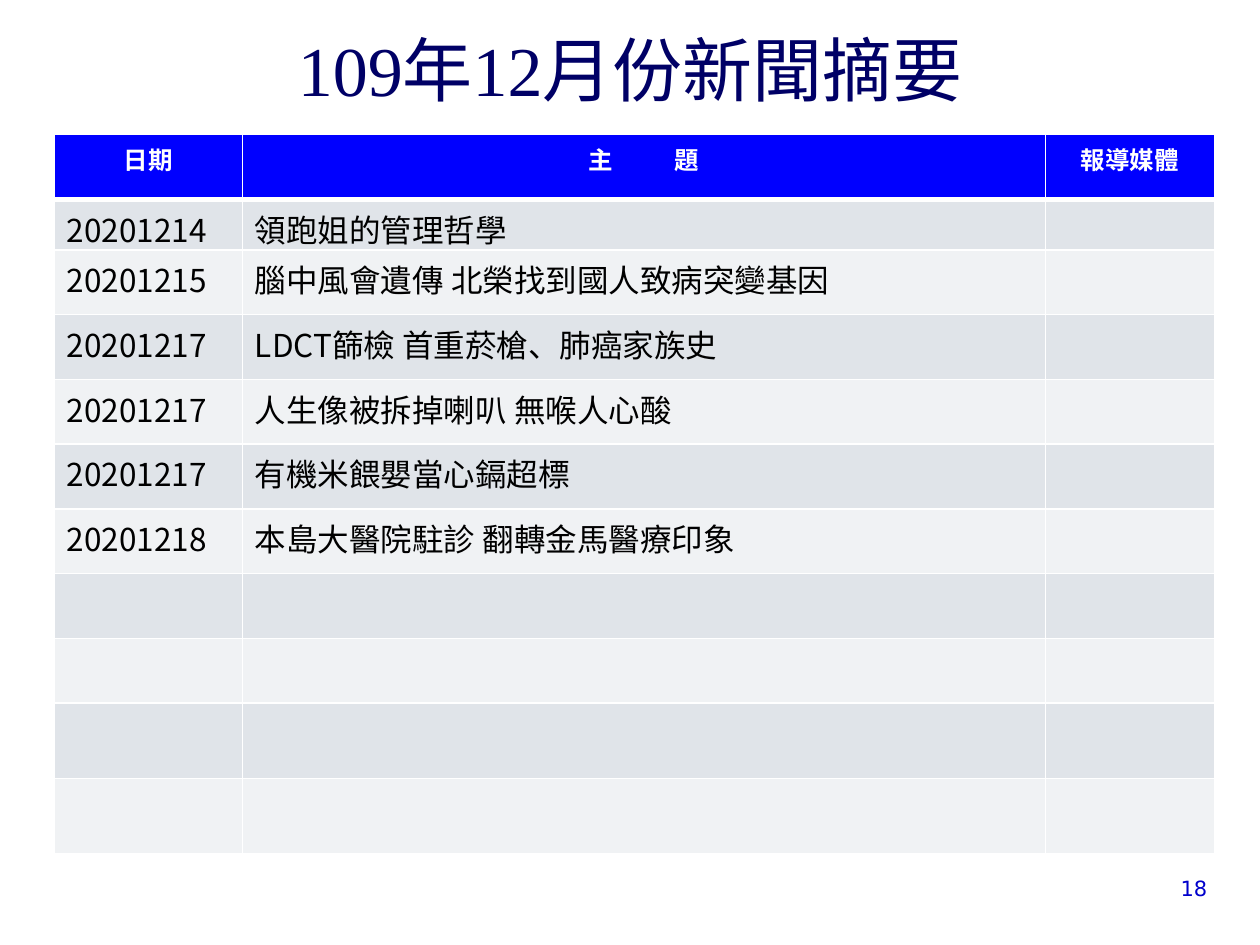
import pptx
import pptx.dml.color
import pptx.enum.text
import pptx.oxml
import pptx.oxml.ns
import pptx.util

Pt = pptx.util.Pt
RGB = pptx.dml.color.RGBColor
ALIGN = pptx.enum.text.PP_ALIGN
ANCHOR = pptx.enum.text.MSO_ANCHOR

WHITE = RGB(0xFF, 0xFF, 0xFF)
BLACK = RGB(0x00, 0x00, 0x00)
NAVY = RGB(0x00, 0x00, 0x66)
BLUE = RGB(0x00, 0x00, 0xFF)
NUMBER_BLUE = RGB(0x00, 0x00, 0xCC)
BANDS = (RGB(0xE0, 0xE4, 0xE9), RGB(0xF0, 0xF2, 0xF4))

CJK = "Noto Sans CJK SC"


def add_text(p, text, size=18, font=CJK, color=BLACK, bold=False,
             align=ALIGN.LEFT, spacing=0):
    """Add a run to a paragraph; spacing is extra points after each letter."""
    p.alignment = align
    r = p.add_run()
    r.text = text
    r.font.size = Pt(size)
    r.font.bold = bold
    r.font.color.rgb = color
    r.font.name = font
    rPr = r.font._element
    ea = pptx.oxml.parse_xml(f'<a:ea {pptx.oxml.ns.nsdecls("a")} typeface="{CJK}"/>')
    rPr.find(pptx.oxml.ns.qn("a:latin")).addnext(ea)
    if spacing:
        rPr.set("spc", str(spacing * 100))


class Deck:
    def __init__(self, width, height):
        self.prs = pptx.Presentation()
        self.prs.slide_width, self.prs.slide_height = Pt(width), Pt(height)
        self.s = self.prs.slides.add_slide(self.prs.slide_layouts[6])

    def text_box(self, x, y, w, h, text, anchor=ANCHOR.TOP, **fmt):
        sp = self.s.shapes.add_textbox(Pt(x), Pt(y), Pt(w), Pt(h))
        tf = sp.text_frame
        tf.word_wrap = True
        tf.vertical_anchor = anchor
        add_text(tf.paragraphs[0], text, **fmt)

    def borders(self, cell, top=1, bottom=1):
        tcPr = cell._tc.get_or_add_tcPr()
        for side, width in (("L", 1), ("R", 1), ("T", top), ("B", bottom)):
            tcPr.append(pptx.oxml.parse_xml(
                f'<a:ln{side} {pptx.oxml.ns.nsdecls("a")} w="{Pt(width)}">'
                f'<a:solidFill><a:srgbClr val="{WHITE}"/></a:solidFill></a:ln{side}>'))

    def table(self, x, y, widths, heights, header, rows):
        tbl = self.s.shapes.add_table(len(heights), len(widths), Pt(x), Pt(y),
                                      Pt(sum(widths)), Pt(sum(heights))).table
        tbl.horz_banding = False
        for col, width in zip(tbl.columns, widths):
            col.width = Pt(width)
        for i, height in enumerate(heights):
            tbl.rows[i].height = Pt(height)
            for cell in tbl.rows[i].cells:
                self.borders(cell, top=3 if i == 1 else 1, bottom=3 if i == 0 else 1)
                cell.fill.solid()
                cell.fill.fore_color.rgb = BANDS[(i - 1) % 2] if i else BLUE

        # Header runs: (text, letter spacing)
        for j, runs in enumerate(header):
            for text, spacing in runs:
                add_text(tbl.cell(0, j).text_frame.paragraphs[0], text, size=14,
                         color=WHITE, bold=True, align=ALIGN.CENTER, spacing=spacing)
        for i, row in enumerate(rows, 1):
            for j, text in enumerate(row):
                add_text(tbl.cell(i, j).text_frame.paragraphs[0], text)


def main():
    deck = Deck(720, 540)

    # Title
    deck.text_box(45, 24.5, 630, 42, "109年12月份新聞摘要", anchor=ANCHOR.BOTTOM,
                  size=40, font="Times New Roman", color=NAVY, align=ALIGN.CENTER)

    # News table
    header = [[("日期", 0)], [("主", 0), (" ", 32), ("題", 0)], [("報導媒體", 0)]]
    news = [
        ("20201214", "領跑姐的管理哲學"),
        ("20201215", "腦中風會遺傳 北榮找到國人致病突變基因"),
        ("20201217", "LDCT篩檢 首重菸槍、肺癌家族史"),
        ("20201217", "人生像被拆掉喇叭 無喉人心酸"),
        ("20201217", "有機米餵嬰當心鎘超標"),
        ("20201218", "本島大醫院駐診 翻轉金馬醫療印象"),
    ]
    deck.table(31, 77, [107.5, 459, 96.5], [37, 25] + [37] * 7 + [43] * 2, header, news)

    # Page number
    deck.text_box(643.5, 497, 53.5, 21.5, "18", size=12, font="DejaVu Sans",
                  color=NUMBER_BLUE, align=ALIGN.RIGHT)

    deck.prs.save("out.pptx")


if __name__ == "__main__":
    main()
